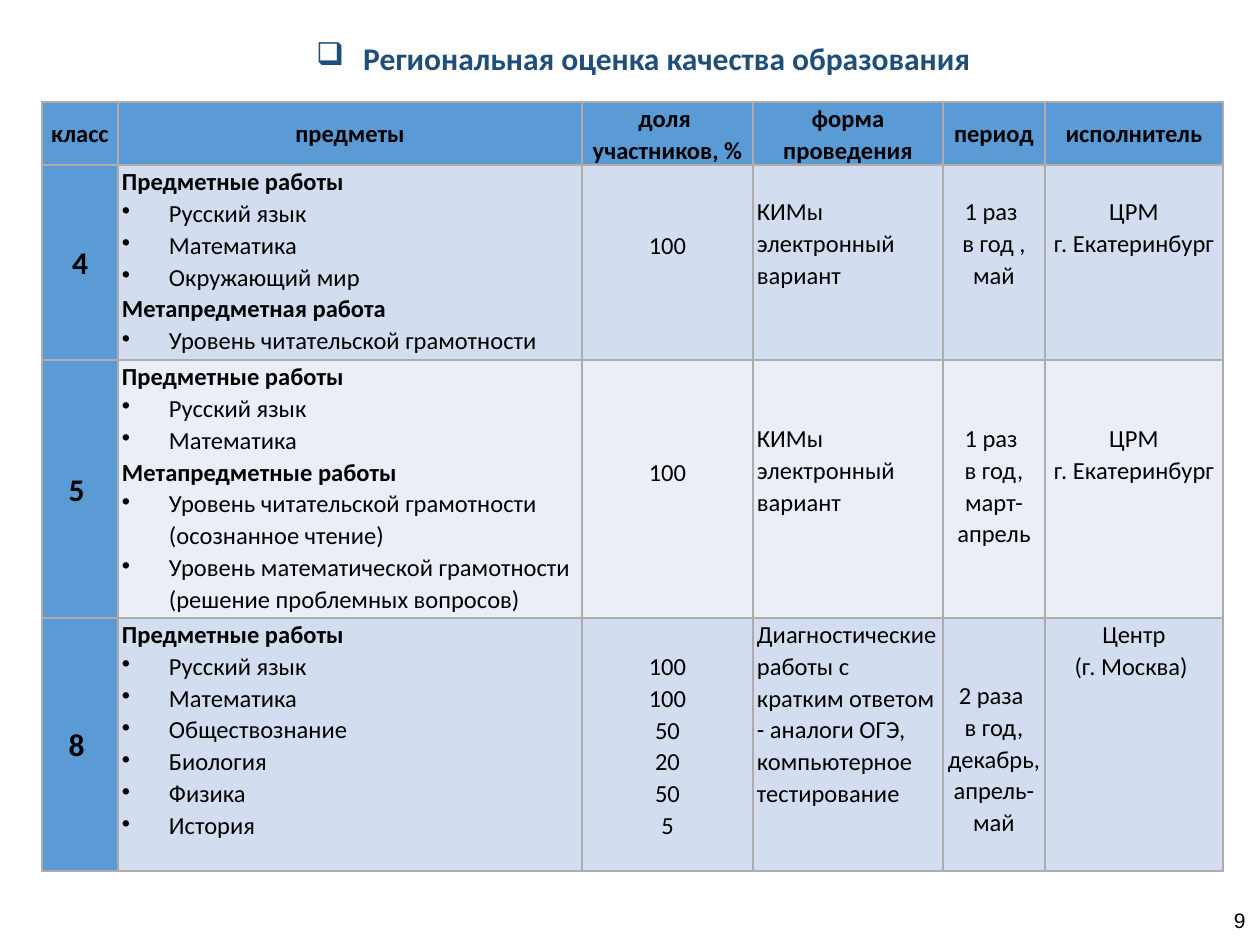
from lxml.etree import SubElement
from pptx import Presentation
from pptx.dml.color import RGBColor
from pptx.enum.text import MSO_ANCHOR as Anchor, PP_ALIGN as Align
from pptx.oxml.ns import qn
from pptx.util import Pt

BLUE, BAND, PALE, GRAY = "5B9BD5", "D2DEEF", "EAEFF7", "AFABAB"
COLUMN_WIDTHS = [76, 464, 171, 190, 102, 178]
ROW_HEIGHTS = [63, 195, 258, 253]
INDENT = 47
HEADING_ENDINGS = ("работы", "работа")

HEADERS = ["класс", "предметы", "доля \nучастников, %", "форма проведения",
           "период", "исполнитель"]
FORM = "КИМы электронный вариант"
CENTER = "ЦРМ\nг. Екатеринбург"

# Each row: grade, then (text, top margin in px) for every other column
ROWS = [
    ["4",
     ("Предметные работы\nРусский язык\nМатематика\nОкружающий мир\n"
      "Метапредметная работа\nУровень читательской грамотности", 0),
     ("100", 64), (FORM, 30), ("1 раз \nв год ,\nмай", 30), (CENTER, 30)],
    ["5 ",
     ("Предметные работы\nРусский язык\nМатематика\nМетапредметные работы\n"
      "Уровень читательской грамотности (осознанное чтение)\n"
      "Уровень математической грамотности (решение проблемных вопросов)", 0),
     ("100", 96), (FORM, 62), ("1 раз \nв год,\nмарт-апрель", 62), (CENTER, 62)],
    ["8 ",
     ("Предметные работы\nРусский язык\nМатематика\nОбществознание\n"
      "Биология\nФизика\nИстория", 0),
     ("100\n100\n50\n20\n50\n5", 32),
     ("Диагностические работы с кратким ответом - аналоги ОГЭ, "
      "компьютерное тестирование", 0),
     ("2 раза \nв год,\nдекабрь, апрель-май", 61),
     ("Центр\n(г. Москва) ", 0)],
]


def px(value):
    return round(value * 914400 / 126)


def color(hex_string):
    return RGBColor.from_string(hex_string)


def format_paragraph(paragraph, size, align, bold=False, font="Calibri",
                     hex_color="000000", spacing=1.07):
    paragraph.alignment = align
    paragraph.line_spacing = spacing
    for run in paragraph.runs:
        run.font.size = Pt(size)
        run.font.bold = bold
        run.font.name = font
        run.font.color.rgb = color(hex_color)


def add_bullet(paragraph, character):
    properties = paragraph._p.get_or_add_pPr()
    properties.set("marL", str(px(INDENT)))
    properties.set("indent", str(-px(INDENT)))
    SubElement(properties, qn("a:buChar")).set("char", character)


def add_text(slide, left, top, width, height, text):
    box = slide.shapes.add_textbox(px(left), px(top), px(width), px(height))
    box.text_frame.word_wrap = True
    box.text_frame.text = text
    return box.text_frame


def set_borders(cell):
    properties = cell._tc.get_or_add_tcPr()
    for side in ("lnL", "lnR", "lnT", "lnB"):
        line = SubElement(properties, qn(f"a:{side}"))
        line.set("w", str(Pt(1)))
        fill = SubElement(line, qn("a:solidFill"))
        SubElement(fill, qn("a:srgbClr")).set("val", GRAY)


def fill_cell(cell, text, fill, size=14, align=Align.CENTER, bold=False,
              anchor=Anchor.TOP, top=0):
    set_borders(cell)
    cell.fill.solid()
    cell.fill.fore_color.rgb = color(fill)
    cell.margin_left = cell.margin_right = px(4)
    cell.margin_top, cell.margin_bottom = px(top), 0
    cell.vertical_anchor = anchor
    cell.text_frame.text = text
    for paragraph in cell.text_frame.paragraphs:
        format_paragraph(paragraph, size, align, bold)


def format_subjects(cell):
    for paragraph in cell.text_frame.paragraphs:
        is_heading = paragraph.text.endswith(HEADING_ENDINGS)
        format_paragraph(paragraph, 14, Align.LEFT, is_heading)
        if not is_heading:
            add_bullet(paragraph, "•")


def add_assessment_table(slide):
    table = slide.shapes.add_table(
        len(ROW_HEIGHTS), len(COLUMN_WIDTHS), px(42), px(102),
        px(sum(COLUMN_WIDTHS)), px(sum(ROW_HEIGHTS))).table
    for column, width in zip(table.columns, COLUMN_WIDTHS):
        column.width = px(width)
    for row, height in zip(table.rows, ROW_HEIGHTS):
        row.height = px(height)

    # Header row
    for index, header in enumerate(HEADERS):
        fill_cell(table.cell(0, index), header, BLUE, bold=True, anchor=Anchor.MIDDLE)

    # Grades
    for row_index, (grade, *details) in enumerate(ROWS, 1):
        fill_cell(table.cell(row_index, 0), grade, BLUE, size=18, bold=True,
                  anchor=Anchor.MIDDLE)
        band = BAND if row_index % 2 else PALE
        for index, (text, top) in enumerate(details, 1):
            align = Align.LEFT if HEADERS[index] == "форма проведения" else Align.CENTER
            fill_cell(table.cell(row_index, index), text, band, align=align, top=top)
        format_subjects(table.cell(row_index, 1))


def main():
    presentation = Presentation()
    presentation.slide_width, presentation.slide_height = px(1260), px(945)
    slide = presentation.slides.add_slide(presentation.slide_layouts[6])

    # Title
    title = add_text(slide, 52, 30, 1183, 54, "Региональная оценка качества образования")
    format_paragraph(title.paragraphs[0], 18, Align.CENTER, True, hex_color="1F4E79")
    add_bullet(title.paragraphs[0], "❑")

    add_assessment_table(slide)

    # Slide number
    number = add_text(slide, 1208, 895, 50, 50, "9")
    number.vertical_anchor = Anchor.MIDDLE
    format_paragraph(number.paragraphs[0], 12, Align.RIGHT, font="Arial", spacing=1.0)

    presentation.save("out.pptx")


if __name__ == "__main__":
    main()
